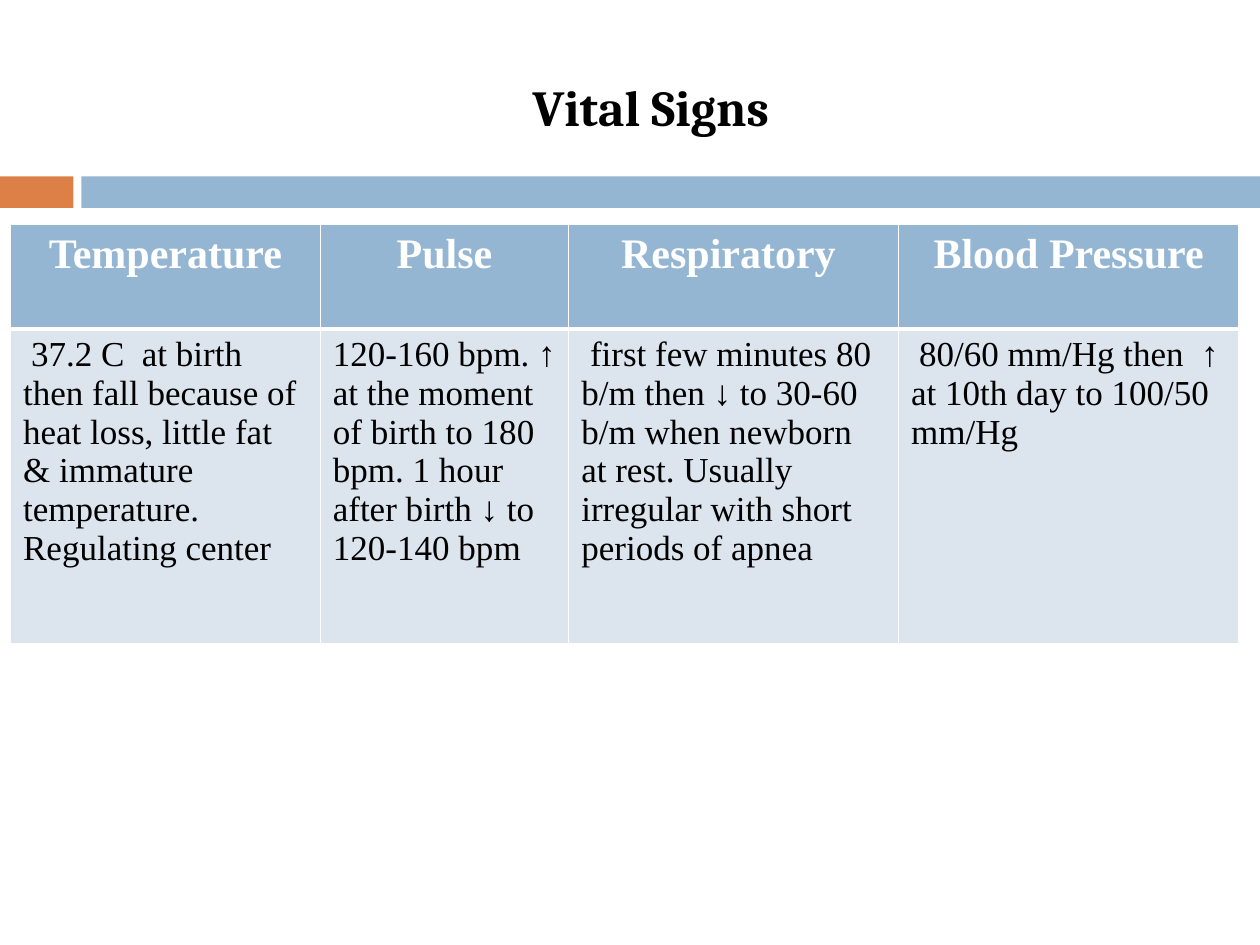
from dataclasses import dataclass

from lxml import etree
from pptx import Presentation
from pptx.dml.color import RGBColor
from pptx.enum.shapes import MSO_SHAPE
from pptx.enum.text import MSO_ANCHOR, PP_ALIGN
from pptx.oxml.ns import qn
from pptx.util import Pt

RECTANGLE = MSO_SHAPE.RECTANGLE
MIDDLE = MSO_ANCHOR.MIDDLE
CENTER = PP_ALIGN.CENTER
LEFT = PP_ALIGN.LEFT


@dataclass(frozen=True)
class Theme:
    orange: str = "DD8047"
    blue: str = "94B6D2"
    pale_blue: str = "DCE5EE"
    white: str = "FFFFFF"
    black: str = "000000"
    title_font: str = "Cambria"
    table_font: str = "Times New Roman"
    title_size: float = 28.8
    header_size: float = 24
    body_size: float = 20
    lead_size: float = 18
    thin_rule: float = 1
    thick_rule: float = 3


THEME = Theme()

COLUMNS = [
    (177, "Temperature", [
        (" ", THEME.lead_size),
        ("37.2 C  at birth then fall because of heat loss, little fat & immature "
         "temperature. Regulating center", THEME.body_size),
    ]),
    (142, "Pulse", [
        ("120-160 bpm. ↑ at the moment of birth to 180 bpm. 1 hour after birth ↓ "
         "to 120-140 bpm", THEME.body_size),
    ]),
    (188.5, "Respiratory ", [
        (" first few minutes 80 b/m then ↓ to 30-60 b/m when newborn at rest. "
         "Usually irregular with short periods of apnea", THEME.body_size),
    ]),
    (194.5, "Blood Pressure", [
        (" ", THEME.lead_size),
        ("80/60 mm/Hg then  ↑ at 10th day to 100/50 mm/Hg", THEME.body_size),
    ]),
]
ROW_HEIGHTS = (59.5, 180)


def add_span(para, text, font, size, color, bold=False):
    span = para.add_run()
    span.text = text
    span.font.name = font
    span.font.size = Pt(size)
    span.font.bold = bold
    span.font.color.rgb = RGBColor.from_string(color)


def add_title(page, left, top, width, height):
    box = page.shapes.add_textbox(Pt(left), Pt(top), Pt(width), Pt(height))
    frame = box.text_frame
    frame.word_wrap = True
    frame.vertical_anchor = MIDDLE
    para = frame.paragraphs[0]
    para.alignment = CENTER
    add_span(para, "Vital Signs", THEME.title_font, THEME.title_size, THEME.black, True)


def add_divider(page, left, top, width, height):
    accent, gap = 42, 4.5
    start = accent + gap
    bars = [(0, accent, THEME.orange), (start, width - start, THEME.blue)]
    for offset, length, color in bars:
        bar = page.shapes.add_shape(
            RECTANGLE, Pt(left + offset), Pt(top), Pt(length), Pt(height))
        bar.shadow.inherit = False
        bar.fill.solid()
        bar.fill.fore_color.rgb = RGBColor.from_string(color)
        bar.line.fill.background()


def style_cell(cell, fill, top_rule, bottom_rule):
    properties = cell._tc.get_or_add_tcPr()
    rules = {"a:lnL": THEME.thin_rule, "a:lnR": THEME.thin_rule,
             "a:lnT": top_rule, "a:lnB": bottom_rule}
    for tag, weight in rules.items():
        line = etree.SubElement(properties, qn(tag), w=str(Pt(weight)))
        paint = etree.SubElement(line, qn("a:solidFill"))
        etree.SubElement(paint, qn("a:srgbClr"), val=THEME.white)
    cell.fill.solid()
    cell.fill.fore_color.rgb = RGBColor.from_string(fill)


def add_vitals_table(page, left, top):
    width = sum(column[0] for column in COLUMNS)
    frame = page.shapes.add_table(
        len(ROW_HEIGHTS), len(COLUMNS), Pt(left), Pt(top), Pt(width), Pt(sum(ROW_HEIGHTS)))
    table = frame.table
    for row, height in zip(table.rows, ROW_HEIGHTS):
        row.height = Pt(height)
    for index, (column_width, heading, reading) in enumerate(COLUMNS):
        table.columns[index].width = Pt(column_width)

        header = table.cell(0, index)
        style_cell(header, THEME.blue, THEME.thin_rule, THEME.thick_rule)
        para = header.text_frame.paragraphs[0]
        para.alignment = CENTER
        add_span(para, heading, THEME.table_font, THEME.header_size, THEME.white, True)

        body = table.cell(1, index)
        style_cell(body, THEME.pale_blue, THEME.thick_rule, THEME.thin_rule)
        para = body.text_frame.paragraphs[0]
        para.alignment = LEFT
        for text, size in reading:
            add_span(para, text, THEME.table_font, size, THEME.black)


def main():
    deck = Presentation()
    deck.slide_width, deck.slide_height = Pt(720), Pt(540)
    page = deck.slides.add_slide(deck.slide_layouts[6])
    add_divider(page, 0, 100.8, 720, 18)
    add_title(page, 30, 22, 684, 78)
    add_vitals_table(page, 6, 128.4)
    deck.save("out.pptx")


if __name__ == "__main__":
    main()
